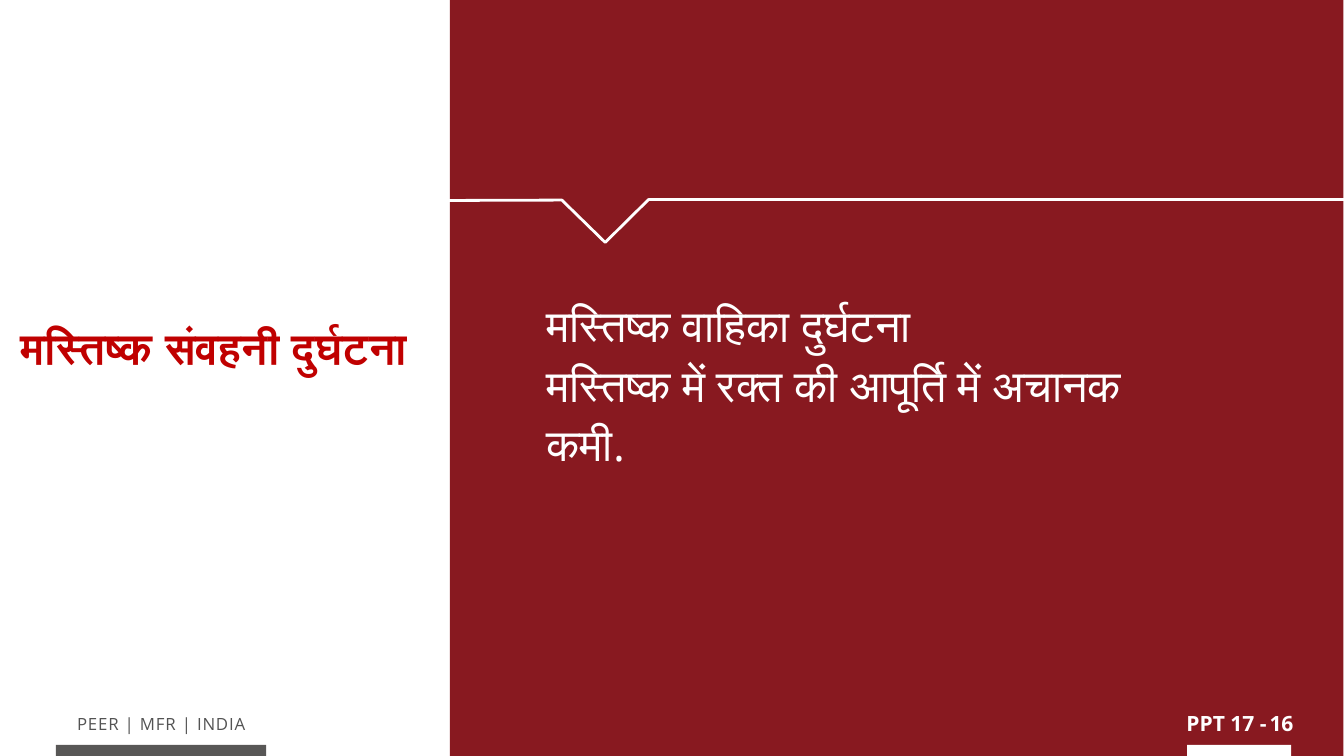
from pptx import Presentation
from pptx.dml.color import RGBColor
from pptx.enum.shapes import MSO_SHAPE
from pptx.enum.text import MSO_AUTO_SIZE as AutoSize, PP_ALIGN as Align
from pptx.util import Inches, Pt

MAROON = RGBColor(0x88, 0x19, 0x20)
RED = RGBColor(0xC0, 0x00, 0x00)
WHITE = RGBColor(0xFF, 0xFF, 0xFF)
TEXT_GRAY = RGBColor(0x53, 0x53, 0x53)
BAR_GRAY = RGBColor(0x58, 0x57, 0x56)

deck = Presentation()
deck.slide_width, deck.slide_height = Inches(26.67), Inches(15)
page = deck.slides.add_slide(deck.slide_layouts[6])


def add_bar(left, top, width, height, color):
    bar = page.shapes.add_shape(
        MSO_SHAPE.RECTANGLE, Inches(left), Inches(top), Inches(width), Inches(height))
    bar.shadow.inherit = False
    bar.fill.solid()
    bar.fill.fore_color.rgb = color
    bar.line.fill.background()


def add_text(left, top, width, height, lines, size, color, bold=False,
             align=Align.LEFT, spacing=1.0, inset=0.09, wrap=True, tracking=0):
    box = page.shapes.add_textbox(Inches(left), Inches(top), Inches(width), Inches(height))
    frame = box.text_frame
    frame.word_wrap = wrap
    frame.auto_size = AutoSize.SHAPE_TO_FIT_TEXT
    frame.margin_left = frame.margin_right = Inches(inset)
    frame.margin_top = frame.margin_bottom = Inches(inset)
    for index, line in enumerate(lines):
        para = frame.add_paragraph() if index else frame.paragraphs[0]
        para.alignment = align
        para.line_spacing = spacing
        span = para.add_run()
        span.text = line
        span.font.name = "Open Sans"
        span.font.size = Pt(size)
        span.font.bold = bold
        span.font.color.rgb = color
        if tracking:
            span.font._element.set("spc", str(round(tracking * 100)))


# Right panel with the definition
add_bar(8.93, 0, 17.73, 15, MAROON)
add_text(10.78, 5.75, 13.28, 3.64,
         ["मस्तिष्क वाहिका दुर्घटना", "मस्तिष्क में रक्त की आपूर्ति में अचानक कमी."],
         64, WHITE, spacing=1.1, inset=0.06)

# Notched divider
notch = [(8.25, 3.98), (11.15, 3.97), (12.01, 4.81), (12.87, 3.96), (26.85, 3.96)]
points = [(Inches(x), Inches(y)) for x, y in notch]
builder = page.shapes.build_freeform(*points[0])
builder.add_line_segments(points[1:], close=False)
divider = builder.convert_to_shape()
divider.shadow.inherit = False
divider.fill.background()
divider.line.color.rgb = WHITE
divider.line.width = Pt(4)

# Title
add_text(0.32, 6.39, 8.61, 1.11, ["मस्तिष्क संवहनी दुर्घटना"], 62, RED,
         bold=True, spacing=0.9)

# Footer
add_text(0.66, 14.08, 5.08, 0.63, ["PEER | MFR | INDIA"], 24, TEXT_GRAY,
         align=Align.CENTER, tracking=1.2)
add_bar(1.11, 14.78, 4.17, 0.22, BAR_GRAY)

# Page number
add_bar(23.56, 14.78, 2.06, 0.22, WHITE)
for left, width, label in [(23.45, 1.78, "PPT 17 -"), (25.1, 0.66, "16")]:
    add_text(left, 14.01, width, 0.74, [label], 30, WHITE, bold=True,
             align=Align.CENTER, wrap=False)

deck.save("out.pptx")
